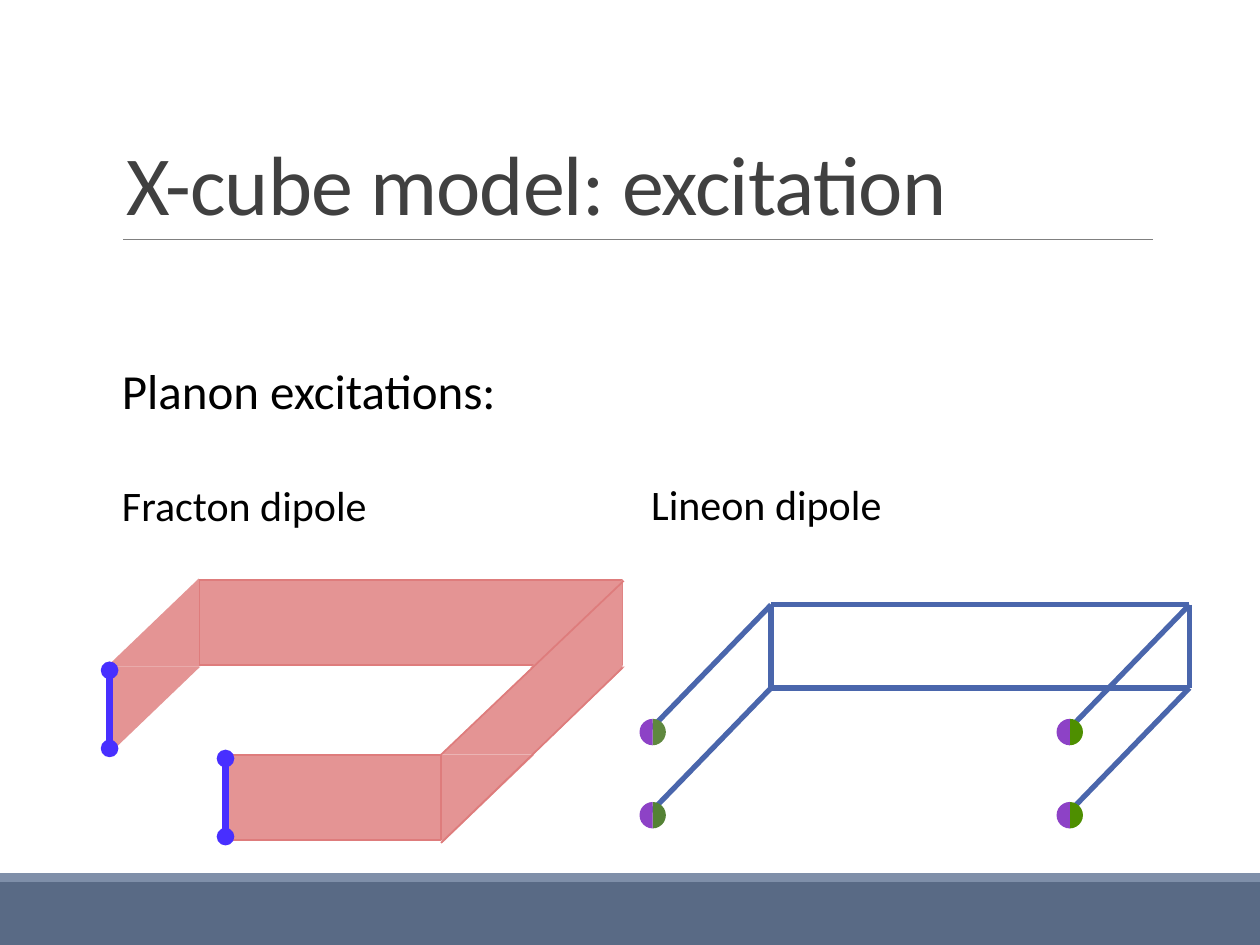
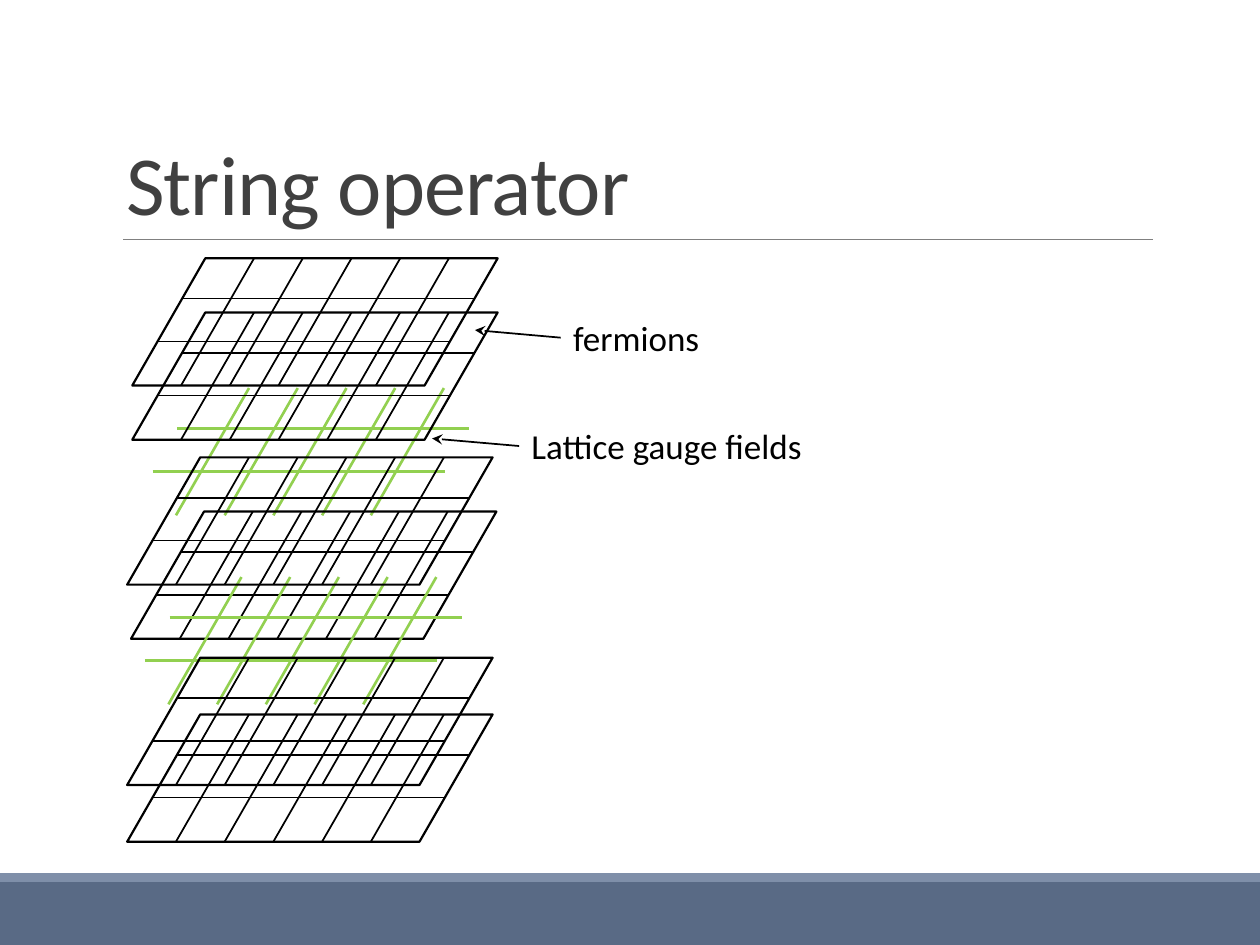
import pptx
import pptx.dml.color
import pptx.enum.shapes
import pptx.enum.text
import pptx.oxml
import pptx.oxml.ns
import pptx.util

Inches = pptx.util.Inches
Pt = pptx.util.Pt
RGBColor = pptx.dml.color.RGBColor
Shape = pptx.enum.shapes.MSO_SHAPE

WIDTH, HEIGHT = 10, 7.5
FONT = "Calibri"
BLACK = RGBColor(0x00, 0x00, 0x00)
TITLE_GRAY = RGBColor(0x40, 0x40, 0x40)
RULE_GRAY = RGBColor(0x80, 0x80, 0x80)
FOOTER_BLUE = RGBColor(0x59, 0x6A, 0x85)
FOOTER_EDGE = RGBColor(0x7F, 0x8F, 0xA9)
FRAME_BLUE = RGBColor(0x4A, 0x66, 0xAC)
PURPLE = RGBColor(0x8D, 0x42, 0xC6)
BRIGHT_GREEN = RGBColor(0x4E, 0x8F, 0x00)
DARK_GREEN = RGBColor(0x54, 0x82, 0x35)
SOFT_GREEN = RGBColor(0x5F, 0x88, 0x3F)
RIBBON_PINK = RGBColor(0xE4, 0x94, 0x94)
RIBBON_EDGE = RGBColor(0xDE, 0x7C, 0x7C)
FRACTON_BLUE = RGBColor(0x48, 0x2F, 0xFF)
GAUGE_GREEN = RGBColor(0x92, 0xD0, 0x50)

# Slide 1: text, box (left, top, width, height), size
PLANON_LABELS = [
    ("Planon excitations:", (0.87, 2.81, 3.2, 0.57), 28),
    ("Fracton dipole", (0.87, 3.76, 2.2, 0.5), 24),
    ("Lineon dipole", (5.07, 3.75, 2.1, 0.5), 24),
]
FRAME_X, FRAME_Y = (6.12, 9.44), (4.8, 5.46)
FRAME_DEPTH = (0.95, 0.98)
# centre of each lineon, colour of its right half
LINEONS = [
    ((8.49, 6.47), BRIGHT_GREEN),
    ((8.49, 5.81), BRIGHT_GREEN),
    ((5.18, 6.47), DARK_GREEN),
    ((5.18, 5.81), SOFT_GREEN),
]
LINEON_SIZE = 0.21
RIBBON_PANELS = [(1.58, 4.6, 3.36, 0.68), (1.78, 5.99, 1.72, 0.68)]
WEDGE_SIZE = (0.73, 0.7)
# left, top, whether the right angle is at the upper left
RIBBON_WEDGES = [
    (0.85, 4.59, False), (0.86, 5.29, True),
    (3.5, 5.29, False), (3.51, 5.99, True),
    (4.21, 4.6, False), (4.23, 5.29, True),
]
RIBBON_EDGES = [((3.5, 5.99), (4.95, 4.61)), ((3.5, 6.69), (4.94, 5.3))]
FRACTON_PAIRS = [(0.87, 5.32), (1.79, 6.02)]
FRACTON_GAP, FRACTON_SIZE = 0.62, 0.14

# Slide 2: left, top of each layer, from back to front
FERMION, GAUGE = "fermion", "gauge"
LOWER_LAYERS = [
    (GAUGE, 1.01, 3.08), (FERMION, 1.04, 4.06), (FERMION, 1.05, 2.48),
    (GAUGE, 0.95, 4.58), (FERMION, 1.01, 5.22),
]
UPPER_LAYERS = [(FERMION, 1.05, 2.05), (FERMION, 1.01, 3.63), (FERMION, 1.01, 5.67)]
LAYER_WIDTH, LAYER_HEIGHT, LAYER_SLANT = 2.9, 1.01, 0.58
LAYER_COLUMNS = 6
LAYER_ROWS = (0.32, 0.66)  # offsets of the inner rows from the top
LAYER_NOTES = [
    ("fermions", (4.45, 2.46, 1.25, 0.44), (3.77, 2.62)),
    ("Lattice gauge fields", (4.12, 3.32, 2.9, 0.44), (3.43, 3.48)),
]


def add_shape(shapes, kind, box, fill=None, line=None, weight=1):
    shape = shapes.add_shape(kind, *map(Inches, box))
    shape.shadow.inherit = False
    if fill is None:
        shape.fill.background()
    else:
        shape.fill.solid()
        shape.fill.fore_color.rgb = fill
    if line is None:
        shape.line.fill.background()
    else:
        shape.line.color.rgb = line
        shape.line.width = Pt(weight)
    return shape


def add_line(shapes, start, end, color, weight):
    line = shapes.add_connector(
        pptx.enum.shapes.MSO_CONNECTOR.STRAIGHT, *map(Inches, (*start, *end)))
    line.line.color.rgb = color
    line.line.width = Pt(weight)
    pptx.oxml.ns.qn("a:effectLst")
    line.element.spPr.append(pptx.oxml.parse_xml(
        f"<a:effectLst {pptx.oxml.ns.nsdecls('a')}/>"))
    return line


def add_label(slide, text, box, size):
    label = slide.shapes.add_textbox(*map(Inches, box))
    label.text_frame.word_wrap = True
    paragraph = label.text_frame.paragraphs[0]
    paragraph.text = text
    paragraph.font.name = FONT
    paragraph.font.size = Pt(size)
    paragraph.font.color.rgb = BLACK
    return label


def add_disc(shapes, kind, center, size, color):
    x, y = center
    return add_shape(shapes, kind, (x - size / 2, y - size / 2, size, size), color)


def furnish_layout(slide):
    """Draw the footer bands and title rule, then move them to the layout."""
    shared = [
        add_shape(slide.shapes, Shape.RECTANGLE, (0, 7, WIDTH, 0.5), FOOTER_BLUE),
        add_shape(slide.shapes, Shape.RECTANGLE, (0, 6.93, WIDTH, 0.07), FOOTER_EDGE),
        add_line(slide.shapes, (0.98, 1.9), (9.15, 1.9), RULE_GRAY, 0.5),
    ]
    for shape in shared:
        slide.slide_layout.shapes.element.append(shape.element)


def add_titled_slide(presentation, text):
    slide = presentation.slides.add_slide(presentation.slide_layouts[5])
    title = slide.shapes.title
    title.left, title.top, title.width, title.height = map(
        Inches, (0.9, 0.31, 8.25, 1.59))
    frame = title.text_frame
    frame.text = text
    frame.vertical_anchor = pptx.enum.text.MSO_ANCHOR.BOTTOM
    frame.auto_size = pptx.enum.text.MSO_AUTO_SIZE.NONE
    paragraph = frame.paragraphs[0]
    paragraph.alignment = pptx.enum.text.PP_ALIGN.LEFT
    paragraph.line_spacing = 0.85
    paragraph.font.name = FONT
    paragraph.font.size = Pt(48)
    paragraph.font.color.rgb = TITLE_GRAY
    paragraph.runs[0].font.language_id = None
    paragraph.runs[0]._r.get_or_add_rPr().set("spc", "-50")
    return slide


def draw_lineon_dipole(shapes):
    left, right = FRAME_X
    top, bottom = FRAME_Y
    depth_x, depth_y = FRAME_DEPTH
    edges = [((x, y), (x - depth_x, y + depth_y)) for x in FRAME_X for y in FRAME_Y]
    edges += [((left, y), (right, y)) for y in FRAME_Y]
    edges += [((x, top), (x, bottom)) for x in FRAME_X]
    for start, end in edges:
        add_line(shapes, start, end, FRAME_BLUE, 3)
    for center, right_color in LINEONS:
        for rotation, color in ((270, right_color), (90, PURPLE)):
            half = add_disc(shapes, Shape.PIE, center, LINEON_SIZE, color)
            half.adjustments[0] = 0
            half.adjustments[1] = 108  # half a turn
            half.rotation = rotation


def draw_fracton_dipole(shapes):
    for box in RIBBON_PANELS:
        add_shape(shapes, Shape.RECTANGLE, box, RIBBON_PINK, RIBBON_EDGE, 1.25)
    for left, top, turned in RIBBON_WEDGES:
        wedge = add_shape(shapes, Shape.RIGHT_TRIANGLE, (left, top, *WEDGE_SIZE),
                          RIBBON_PINK)
        wedge.element.spPr.xfrm.set("flipH", "1")
        wedge.rotation = 180 if turned else 0
    for x, top in FRACTON_PAIRS:
        ends = [(x, top), (x, top + FRACTON_GAP)]
        for center in ends:
            add_disc(shapes, Shape.FLOWCHART_CONNECTOR, center, FRACTON_SIZE,
                     FRACTON_BLUE)
        add_line(shapes, *ends, FRACTON_BLUE, 4)
    for start, end in RIBBON_EDGES:
        add_line(shapes, start, end, RIBBON_EDGE, 1)


def draw_layer(slide, kind, left, top):
    """Draw a slanted lattice; only a fermion layer has an outline."""
    shapes = slide.shapes.add_group_shape().shapes
    color, weight = (BLACK, 1) if kind == FERMION else (GAUGE_GREEN, 1.5)
    if kind == FERMION:
        outline = add_shape(shapes, Shape.PARALLELOGRAM,
                            (left, top, LAYER_WIDTH, LAYER_HEIGHT), None, BLACK, 1.25)
        outline.adjustments[0] = LAYER_SLANT / LAYER_HEIGHT
    span = LAYER_WIDTH - LAYER_SLANT
    for column in range(1, LAYER_COLUMNS):
        x = left + span * column / LAYER_COLUMNS
        add_line(shapes, (x + LAYER_SLANT, top), (x, top + LAYER_HEIGHT), color, weight)
    for offset in LAYER_ROWS:
        x = left + LAYER_SLANT * (1 - offset / LAYER_HEIGHT)
        y = top + offset
        add_line(shapes, (x, y), (x + span, y), color, weight)


def add_note(slide, text, box, target):
    label = add_label(slide, text, box, 20)
    left, top, _, height = box
    arrow = add_line(slide.shapes, (left, top + height / 2), target, BLACK, 1)
    arrow.begin_connect(label, 1)
    arrow.line._get_or_add_ln().append(pptx.oxml.parse_xml(
        f"<a:tailEnd {pptx.oxml.ns.nsdecls('a')} type='stealth'/>"))


def build_excitation_slide(presentation):
    slide = add_titled_slide(presentation, "X-cube model: excitation")
    furnish_layout(slide)
    draw_lineon_dipole(slide.shapes.add_group_shape().shapes)
    draw_fracton_dipole(slide.shapes.add_group_shape().shapes)
    for label in PLANON_LABELS:
        add_label(slide, *label)


def build_string_slide(presentation):
    slide = add_titled_slide(presentation, "String operator")
    for layer in LOWER_LAYERS:
        draw_layer(slide, *layer)
    for note in LAYER_NOTES:
        add_note(slide, *note)
    for layer in UPPER_LAYERS:
        draw_layer(slide, *layer)


def main():
    presentation = pptx.Presentation()
    presentation.slide_width = Inches(WIDTH)
    presentation.slide_height = Inches(HEIGHT)
    build_excitation_slide(presentation)
    build_string_slide(presentation)
    presentation.save("out.pptx")


if __name__ == "__main__":
    main()
